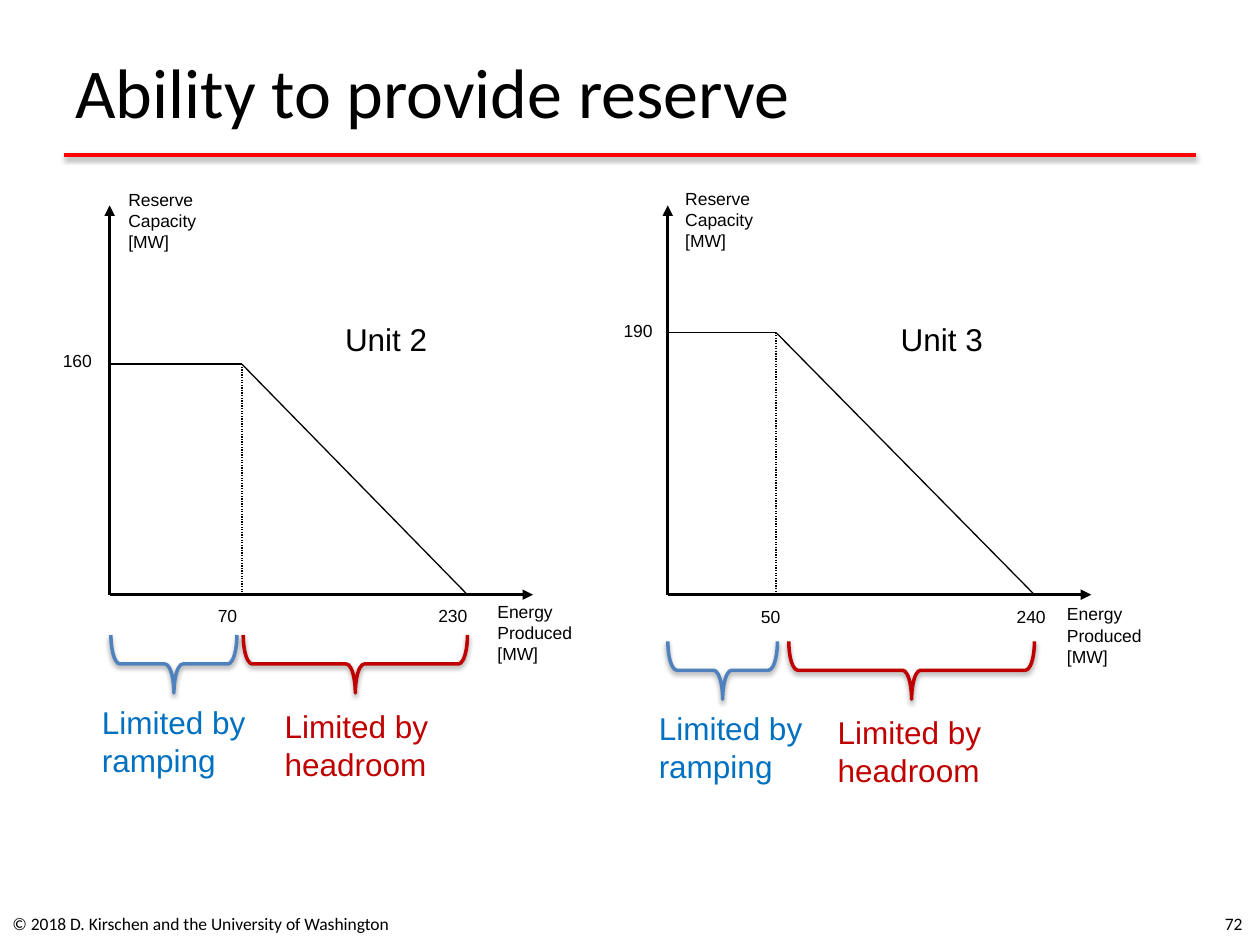
from dataclasses import dataclass

from lxml import etree
from pptx import Presentation
from pptx.dml.color import RGBColor
from pptx.enum.dml import MSO_LINE
from pptx.enum.shapes import MSO_CONNECTOR, MSO_SHAPE
from pptx.enum.text import MSO_ANCHOR, PP_ALIGN
from pptx.oxml.ns import qn
from pptx.util import Inches, Pt

STRAIGHT = MSO_CONNECTOR.STRAIGHT
RIGHT_BRACE = MSO_SHAPE.RIGHT_BRACE
DOTTED = MSO_LINE.ROUND_DOT
TOP, MIDDLE = MSO_ANCHOR.TOP, MSO_ANCHOR.MIDDLE
LEFT, RIGHT = PP_ALIGN.LEFT, PP_ALIGN.RIGHT

COLORS = {
    "text": "000000",
    "rule": "FF0000",
    "ramping_brace": "4F81BD",
    "ramping_text": "0070C0",
    "headroom": "C00000",
}
AXIS_Y = 4.72
AXIS_TOP = 1.63
AXIS_LENGTH = 3.36
BRACE_DEPTH = 0.46


@dataclass
class Label:
    text: str
    left: float
    top: float
    width: float
    height: float
    size: int = 10
    color: str = "text"
    font: str = "Arial"
    anchor: MSO_ANCHOR = TOP
    align: PP_ALIGN = LEFT


@dataclass
class Brace:
    left: float
    right: float
    color: str


@dataclass
class Unit:
    origin_x: float
    knee_x: float
    knee_y: float
    end_x: float
    brace_top: float
    braces: list[Brace]
    labels: list[Label]


def tick(text: str, left: float, top: float) -> Label:
    return Label(text, left, top, 0.55, 0.37)


def reserve_title(left: float, top: float) -> Label:
    return Label("Reserve\nCapacity\n[MW]", left, top, 0.94, 0.73)


def energy_title(left: float, top: float) -> Label:
    return Label("Energy\nProduced\n[MW]", left, top, 1.04, 0.82)


def unit_name(text: str, left: float) -> Label:
    return Label(text, left, 2.49, 0.9, 0.4, 18)


def limit(cause: str, left: float, top: float, color: str) -> Label:
    return Label(f"Limited by\n{cause}", left, top, 1.42, 0.71, 18, color)


PAGE_LABELS = [
    Label("Ability to provide reserve", 0.5, 0.13, 9, 1.17, 40, font="Calibri", anchor=MIDDLE),
    Label("© 2018 D. Kirschen and the University of Washington", 0, 7.13, 3.27, 0.4,
          font="Calibri", anchor=MIDDLE),
    Label("72", 7.63, 7.13, 2.33, 0.4, font="Calibri", anchor=MIDDLE, align=RIGHT),
]
UNITS = [
    Unit(0.87, 1.92, 2.89, 3.71, 5.04,
         [Brace(0.88, 1.88, "ramping_brace"), Brace(1.93, 3.71, "headroom")],
         [reserve_title(0.92, 1.45), energy_title(3.85, 4.72), unit_name("Unit 2", 2.64),
          tick("160", 0.4, 2.73), tick("70", 1.63, 4.75), tick("230", 3.38, 4.75),
          limit("ramping", 0.71, 5.53, "ramping_text"),
          limit("headroom", 2.16, 5.56, "headroom")]),
    Unit(5.3, 6.16, 2.64, 8.21, 5.09,
         [Brace(5.3, 6.17, "ramping_brace"), Brace(6.26, 8.21, "headroom")],
         [reserve_title(5.34, 1.44), energy_title(8.37, 4.74), unit_name("Unit 3", 7.05),
          tick("190", 4.85, 2.49), tick("50", 5.94, 4.76), tick("240", 7.97, 4.76),
          limit("ramping", 5.13, 5.58, "ramping_text"),
          limit("headroom", 6.55, 5.61, "headroom")]),
]


def color_of(name: str) -> RGBColor:
    return RGBColor.from_string(COLORS[name])


def set_effects(shape, shadow: bool) -> None:
    """Replace the theme's effect with a soft shadow below, or with none."""
    effects = etree.SubElement(shape._element.spPr, qn("a:effectLst"))
    if shadow:
        outer = etree.SubElement(effects, qn("a:outerShdw"), blurRad=str(Pt(3.1)),
                                 dist=str(Pt(1.6)), dir="5400000", rotWithShape="0")
        color = etree.SubElement(outer, qn("a:srgbClr"), val="000000")
        etree.SubElement(color, qn("a:alpha"), val="38000")


def add_line(slide, start: tuple[float, float], end: tuple[float, float], width: float = 0.75,
             color: str = "text", arrow: bool = False, dotted: bool = False,
             shadow: bool = False) -> None:
    connector = slide.shapes.add_connector(STRAIGHT, *map(Inches, start + end))
    connector.line.color.rgb = color_of(color)
    connector.line.width = Pt(width)
    if dotted:
        connector.line.dash_style = DOTTED
    if arrow:
        etree.SubElement(connector.line._get_or_add_ln(), qn("a:tailEnd"), type="triangle")
    set_effects(connector, shadow)


def add_label(slide, label: Label) -> None:
    box = slide.shapes.add_textbox(Inches(label.left), Inches(label.top),
                                   Inches(label.width), Inches(label.height))
    frame = box.text_frame
    frame.word_wrap = True
    frame.vertical_anchor = label.anchor
    frame.text = label.text
    for paragraph in frame.paragraphs:
        paragraph.alignment = label.align
        paragraph.font.name = label.font
        paragraph.font.size = Pt(label.size)
        paragraph.font.color.rgb = color_of(label.color)


def add_brace(slide, brace: Brace, top: float) -> None:
    """Draw a brace pointing down: a right brace turned about its centre."""
    span = brace.right - brace.left
    left = (brace.left + brace.right - BRACE_DEPTH) / 2
    shape = slide.shapes.add_shape(RIGHT_BRACE, Inches(left), Inches(top + (BRACE_DEPTH - span) / 2),
                                   Inches(BRACE_DEPTH), Inches(span))
    shape.rotation = 90
    shape.adjustments[0] = 0.156
    shape.fill.background()
    shape.line.color.rgb = color_of(brace.color)
    shape.line.width = Pt(2)
    set_effects(shape, shadow=True)


def add_unit(slide, unit: Unit) -> None:
    origin = (unit.origin_x, AXIS_Y)
    knee = (unit.knee_x, unit.knee_y)
    add_line(slide, origin, (unit.origin_x, AXIS_TOP), 1.5, arrow=True)
    add_line(slide, origin, (unit.origin_x + AXIS_LENGTH, AXIS_Y), 1.5, arrow=True)
    add_line(slide, (unit.origin_x, unit.knee_y), knee)
    add_line(slide, knee, (unit.end_x, AXIS_Y))
    add_line(slide, knee, (unit.knee_x, AXIS_Y), dotted=True)
    for brace in unit.braces:
        add_brace(slide, brace, unit.brace_top)
    for label in unit.labels:
        add_label(slide, label)


def main() -> None:
    presentation = Presentation()
    presentation.slide_width = Inches(10)
    presentation.slide_height = Inches(7.5)
    slide = presentation.slides.add_slide(presentation.slide_layouts[6])
    add_line(slide, (0.51, 1.23), (9.49, 1.23), 2, "rule", shadow=True)
    for label in PAGE_LABELS:
        add_label(slide, label)
    for unit in UNITS:
        add_unit(slide, unit)
    presentation.save("out.pptx")


if __name__ == "__main__":
    main()
